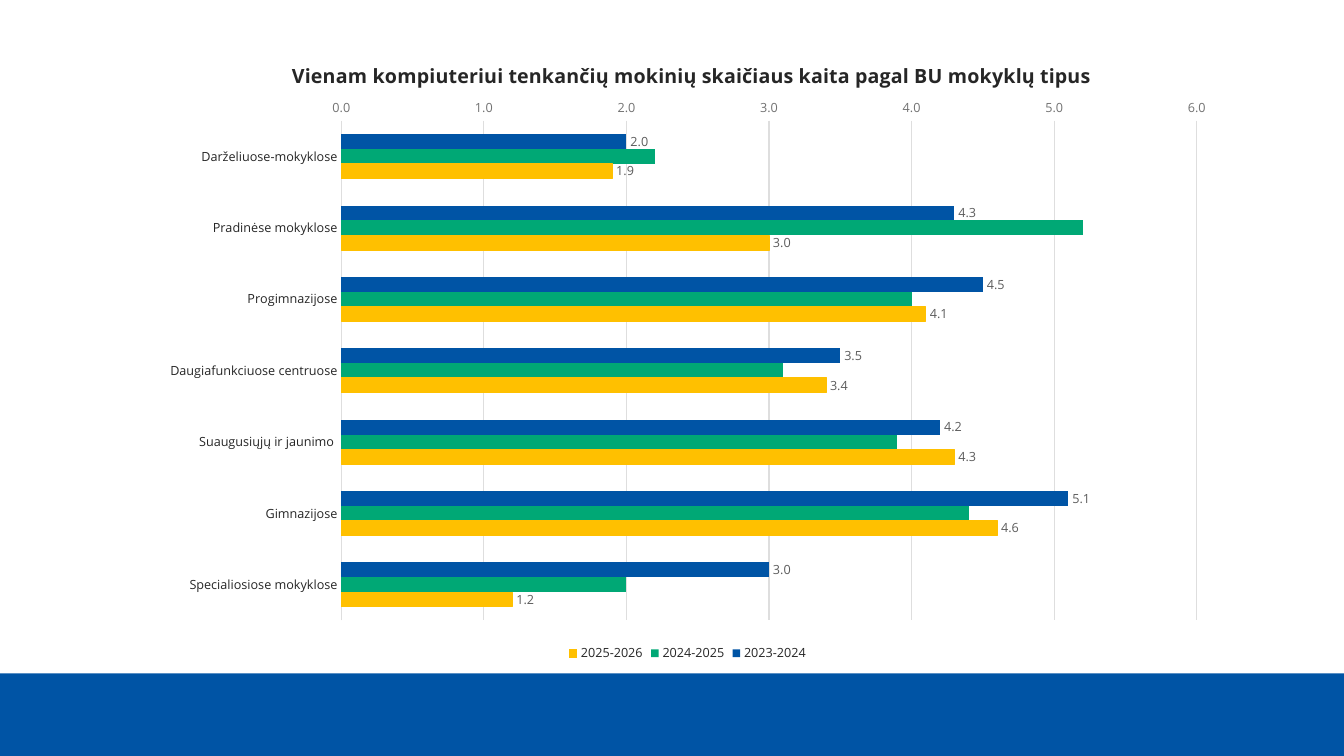
"""Build a slide charting pupils per computer by school type."""
from dataclasses import dataclass

from lxml.etree import SubElement
from pptx import Presentation
from pptx.chart.data import CategoryChartData
from pptx.dml.color import RGBColor
from pptx.enum.chart import XL_CHART_TYPE as ChartType
from pptx.enum.chart import XL_LABEL_POSITION as LabelPosition
from pptx.enum.chart import XL_LEGEND_POSITION as LegendPosition
from pptx.enum.chart import XL_TICK_MARK as TickMark
from pptx.enum.shapes import MSO_SHAPE as Preset
from pptx.oxml.ns import qn
from pptx.util import Inches, Pt


@dataclass(frozen=True)
class Theme:
    font: str = "Open Sans"
    blue: str = "0054A5"
    green: str = "00A875"
    yellow: str = "FFC000"
    ink: str = "262626"
    axis_text: str = "727272"
    label_text: str = "5C5C5C"
    grid: str = "DEDEDE"
    title_size: int = 14
    base_size: int = 10
    small_size: int = 9
    hairline: float = 0.75


THEME = Theme()
HEADING = "Vienam kompiuteriui tenkančių mokinių skaičiaus kaita pagal BU mokyklų tipus"
SCHOOL_TYPES = [
    "Darželiuose-mokyklose",
    "Pradinėse mokyklose",
    "Progimnazijose",
    "Daugiafunkciuose centruose",
    "Suaugusiųjų ir jaunimo ",
    "Gimnazijose",
    "Specialiosiose mokyklose",
]
YEARS = [
    ("2023-2024", [2.0, 4.3, 4.5, 3.5, 4.2, 5.1, 3.0], THEME.blue, True),
    ("2024-2025", [2.2, 5.2, 4.0, 3.1, 3.9, 4.4, 2.0], THEME.green, False),
    ("2025-2026", [1.9, 3.0, 4.1, 3.4, 4.3, 4.6, 1.2], THEME.yellow, True),
]


def place(parent, index, **fractions):
    for old in parent.findall(qn("c:layout")):
        parent.remove(old)
    layout = SubElement(parent, qn("c:layout"))
    parent.insert(index, layout)
    manual = SubElement(layout, qn("c:manualLayout"))
    settings = {"xMode": "edge", "yMode": "edge", **fractions}
    if "w" in fractions:
        SubElement(manual, qn("c:layoutTarget")).set("val", "inner")
    for name, value in settings.items():
        SubElement(manual, qn(f"c:{name}")).set("val", str(value))


class SlideBuilder:
    def __init__(self, slide, theme):
        self.slide = slide
        self.theme = theme

    def style_font(self, font, size, color, bold=False):
        font.name = self.theme.font
        font.size = Pt(size)
        font.bold = bold
        font.color.rgb = RGBColor.from_string(color)

    def style_line(self, line, color):
        line.color.rgb = RGBColor.from_string(color)
        line.width = Pt(self.theme.hairline)

    def band(self, left, top, width, height, color):
        footer = self.slide.shapes.add_shape(
            Preset.RECTANGLE, Inches(left), Inches(top), Inches(width), Inches(height))
        footer.shadow.inherit = False
        footer.fill.solid()
        footer.fill.fore_color.rgb = RGBColor.from_string(color)
        footer.line.fill.background()

    def bar_chart(self, left, top, width, height, heading, categories, years):
        data = CategoryChartData(number_format="0.0")
        data.categories = categories
        for name, values, _, _ in years:
            data.add_series(name, values)
        chart = self.slide.shapes.add_chart(
            ChartType.BAR_CLUSTERED, Inches(left), Inches(top),
            Inches(width), Inches(height), data).chart
        self.style_font(chart.font, self.theme.base_size, self.theme.ink)
        self.chart_heading(chart, heading)
        self.chart_axes(chart)
        self.chart_legend(chart)
        plot = chart.plots[0]
        plot.gap_width = 182
        plot.overlap = 0
        plot.vary_by_categories = False
        for series, (_, _, color, labelled) in zip(plot.series, years):
            self.chart_series(series, color, labelled)
        place(chart.element.find(".//" + qn("c:plotArea")), 0,
              x=0.179, y=0.141, w=0.793, h=0.787)

    def chart_heading(self, chart, heading):
        chart.has_title = True
        paragraph = chart.chart_title.text_frame.paragraphs[0]
        paragraph.text = heading
        self.style_font(paragraph.font, self.theme.title_size, self.theme.ink, True)
        place(chart.element.find(".//" + qn("c:title")), 1, x=0.13, y=0.04)

    def chart_axes(self, chart):
        schools, ratio = chart.category_axis, chart.value_axis
        for axis, color in ((schools, self.theme.ink), (ratio, self.theme.axis_text)):
            axis.major_tick_mark = TickMark.NONE
            axis.minor_tick_mark = TickMark.NONE
            self.style_font(axis.tick_labels.font, self.theme.small_size, color)
        schools.reverse_order = True
        self.style_line(schools.format.line, self.theme.grid)
        ratio.minimum_scale, ratio.maximum_scale, ratio.major_unit = 0, 6, 1
        ratio.tick_labels.number_format = "0.0"
        ratio.tick_labels.number_format_is_linked = False
        ratio.format.line.fill.background()
        ratio.has_major_gridlines = True
        self.style_line(ratio.major_gridlines.format.line, self.theme.grid)

    def chart_legend(self, chart):
        chart.has_legend = True
        chart.legend.position = LegendPosition.BOTTOM
        chart.legend.include_in_layout = False
        self.style_font(chart.legend.font, self.theme.small_size, self.theme.ink)

    def chart_series(self, series, color, labelled):
        series.format.fill.solid()
        series.format.fill.fore_color.rgb = RGBColor.from_string(color)
        if color == self.theme.yellow:
            self.style_line(series.format.line, color)
        if labelled:
            labels = series.data_labels
            labels.show_value = True
            labels.number_format = "0.0"
            labels.number_format_is_linked = False
            labels.position = LabelPosition.OUTSIDE_END
            self.style_font(labels.font, self.theme.small_size, self.theme.label_text)


def main():
    deck = Presentation()
    deck.slide_width, deck.slide_height = Inches(13.33), Inches(7.5)
    builder = SlideBuilder(deck.slides.add_slide(deck.slide_layouts[6]), THEME)
    builder.band(0, 6.68, 13.33, 0.82, THEME.blue)
    builder.bar_chart(1.47, 0.31, 10.7, 6.3, HEADING, SCHOOL_TYPES, YEARS)
    deck.save("out.pptx")


if __name__ == "__main__":
    main()
